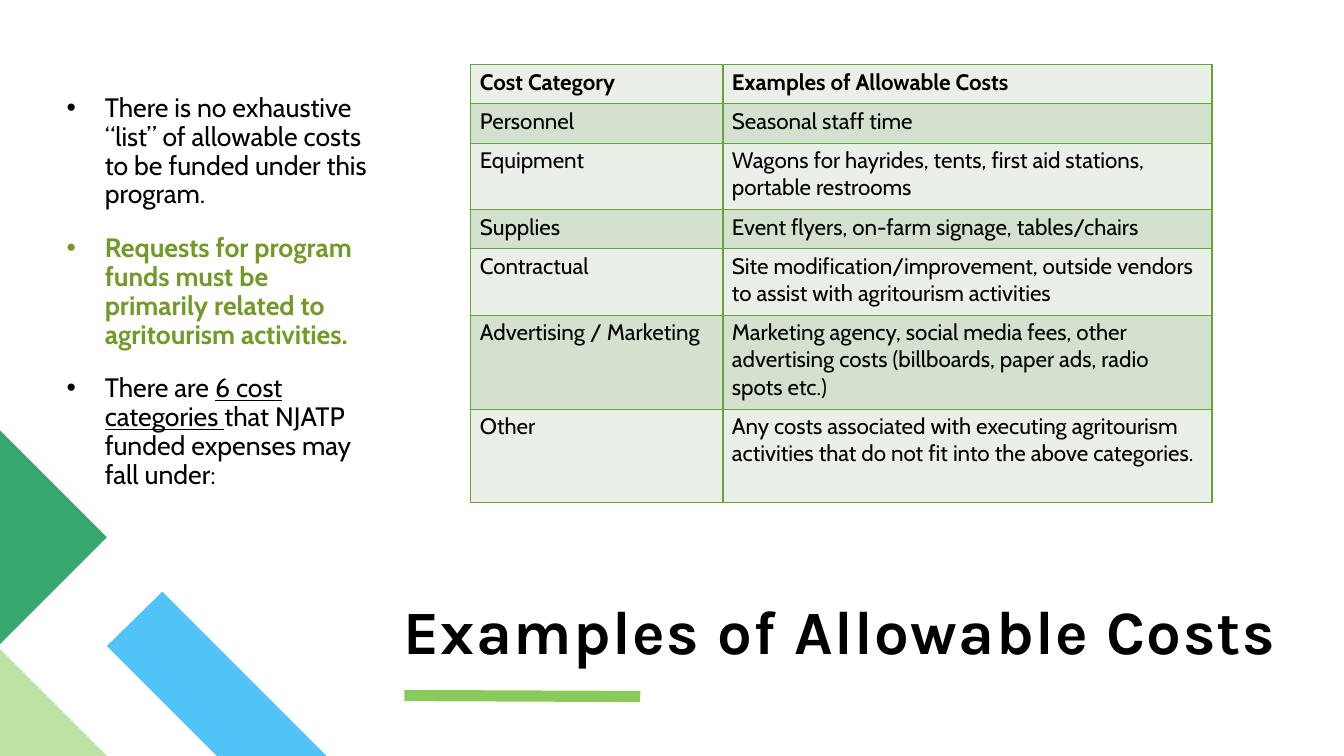
from dataclasses import dataclass

from lxml import etree
from pptx import Presentation
from pptx.dml.color import RGBColor
from pptx.enum import shapes, text
from pptx.oxml import ns
from pptx.util import Inches, Pt

BLACK = RGBColor(0x00, 0x00, 0x00)
BLUE = RGBColor(0x51, 0xC3, 0xF9)
PALE_GREEN = RGBColor(0xBF, 0xE2, 0xA7)
DEEP_GREEN = RGBColor(0x37, 0xA7, 0x6F)
RULE_GREEN = RGBColor(0x89, 0xCA, 0x5D)
OLIVE = RGBColor(0x73, 0x9A, 0x28)
BORDER = RGBColor(0x63, 0xA5, 0x37)
BANDS = (RGBColor(0xEA, 0xF0, 0xE8), RGBColor(0xD3, 0xE1, 0xCE))
BODY_FONT, TITLE_FONT = "Cabin", "Karla"


@dataclass
class Corner:
    points: list[tuple[float, float]]
    color: RGBColor


@dataclass
class Run:
    text: str
    color: RGBColor = BLACK
    bold: bool = False
    underline: bool = False


@dataclass
class CostRow:
    category: str
    examples: str
    height: float


CORNERS = [
    Corner([(3.24, 7.5), (2.15, 7.5), (1.06, 6.41), (1.61, 5.87)], BLUE),
    Corner([(1.06, 7.5), (0, 7.5), (0, 6.44)], PALE_GREEN),
    Corner([(0, 4.27), (1.06, 5.33), (0, 6.39)], DEEP_GREEN),
]
BULLETS = [
    [Run("There is no exhaustive “list” of allowable costs to be funded under this program.")],
    [Run("Requests for program funds must be primarily related to agritourism activities.", OLIVE, bold=True)],
    [Run("There are "), Run("6 cost categories ", underline=True),
     Run("that NJATP funded expenses may fall under:")],
]
COSTS = [
    CostRow("Cost Category", "Examples of Allowable Costs", 0.39),
    CostRow("Personnel", "Seasonal staff time", 0.39),
    CostRow("Equipment", "Wagons for hayrides, tents, first aid stations, portable restrooms", 0.66),
    CostRow("Supplies", "Event flyers, on-farm signage, tables/chairs", 0.39),
    CostRow("Contractual", "Site modification/improvement, outside vendors to assist with "
            "agritourism activities", 0.66),
    CostRow("Advertising / Marketing", "Marketing agency, social media fees, other advertising "
            "costs (billboards, paper ads, radio spots etc.)", 0.93),
    CostRow("Other", "Any costs associated with executing agritourism activities that do not "
            "fit into the above categories.", 0.93),
]
COLUMN_WIDTHS = (2.5, 4.85)


def add_run(p, run: Run, size: float, font: str):
    r = p.add_run()
    r.text = run.text
    r.font.size, r.font.name = Pt(size), font
    r.font.bold, r.font.underline = run.bold, run.underline
    r.font.color.rgb = run.color
    return r


def add_corner(s, corner: Corner) -> None:
    builder = s.shapes.build_freeform(*map(Inches, corner.points[0]), scale=1.0)
    builder.add_line_segments([(Inches(x), Inches(y)) for x, y in corner.points[1:]])
    sp = builder.convert_to_shape()
    sp.shadow.inherit = False
    sp.fill.solid()
    sp.fill.fore_color.rgb = corner.color
    sp.line.fill.background()


def add_text_frame(s, at: tuple[float, ...], margins: tuple[float, ...]):
    tf = s.shapes.add_textbox(*map(Inches, at)).text_frame
    tf.word_wrap = True
    tf.margin_left, tf.margin_top, tf.margin_right, tf.margin_bottom = map(Inches, margins)
    return tf


def add_bullet(p, runs: list[Run]) -> None:
    p.line_spacing, p.space_before = 0.9, Pt(18)
    pPr = p._p.get_or_add_pPr()
    pPr.set("marL", str(Inches(0.38)))
    pPr.set("indent", str(-Inches(0.38)))
    etree.SubElement(pPr, ns.qn("a:buFont"), typeface="Arial")
    etree.SubElement(pPr, ns.qn("a:buChar"), char="•")
    for run in runs:
        add_run(p, run, 19, BODY_FONT)


def set_borders(cell) -> None:
    tcPr = cell._tc.get_or_add_tcPr()
    for i, side in enumerate(("lnL", "lnR", "lnT", "lnB")):
        ln = etree.Element(ns.qn(f"a:{side}"), w=str(Pt(1)))
        fill = etree.SubElement(ln, ns.qn("a:solidFill"))
        etree.SubElement(fill, ns.qn("a:srgbClr"), val=str(BORDER))
        tcPr.insert(i, ln)


def add_cost_table(s) -> None:
    height = sum(row.height for row in COSTS)
    frame = s.shapes.add_table(len(COSTS), len(COLUMN_WIDTHS), Inches(4.67), Inches(0.64),
                               Inches(sum(COLUMN_WIDTHS)), Inches(height))
    table = frame.table
    table.first_row = table.horz_banding = False
    for column, width in zip(table.columns, COLUMN_WIDTHS):
        column.width = Inches(width)
    for i, row in enumerate(COSTS):
        table.rows[i].height = Inches(row.height)
        for j, words in enumerate((row.category, row.examples)):
            cell = table.cell(i, j)
            cell.margin_left = cell.margin_right = Inches(0.09)
            cell.margin_top = cell.margin_bottom = Inches(0.04)
            cell.fill.solid()
            cell.fill.fore_color.rgb = BANDS[i % 2]
            set_borders(cell)
            add_run(cell.text_frame.paragraphs[0], Run(words, bold=i == 0), 16, BODY_FONT)


def main() -> None:
    prs = Presentation()
    prs.slide_width, prs.slide_height = Inches(13.33), Inches(7.5)
    s = prs.slides.add_slide(prs.slide_layouts[6])

    # Corner decoration
    for corner in CORNERS:
        add_corner(s, corner)

    # Rule under the title
    rule = s.shapes.add_connector(shapes.MSO_CONNECTOR.STRAIGHT, Inches(4.01), Inches(6.9),
                                  Inches(6.35), Inches(6.91))
    rule.line.color.rgb, rule.line.width = RULE_GREEN, Pt(8)
    etree.SubElement(rule._element.spPr, ns.qn("a:effectLst"))

    # Title
    tf = add_text_frame(s, (4, 5.1, 8.68, 1.51), (0, 0, 0, 0))
    tf.vertical_anchor = text.MSO_ANCHOR.BOTTOM
    p = tf.paragraphs[0]
    p.line_spacing = 0.8
    r = add_run(p, Run("Examples of Allowable Costs", bold=True), 44, TITLE_FONT)
    r.font._element.set("spc", "100")

    # Bullets
    tf = add_text_frame(s, (0.66, 0.64, 3.09, 4.37), (0, 0.3, 0.1, 0.05))
    for i, runs in enumerate(BULLETS):
        add_bullet(tf.add_paragraph() if i else tf.paragraphs[0], runs)

    # Cost table
    add_cost_table(s)
    prs.save("out.pptx")


if __name__ == "__main__":
    main()
